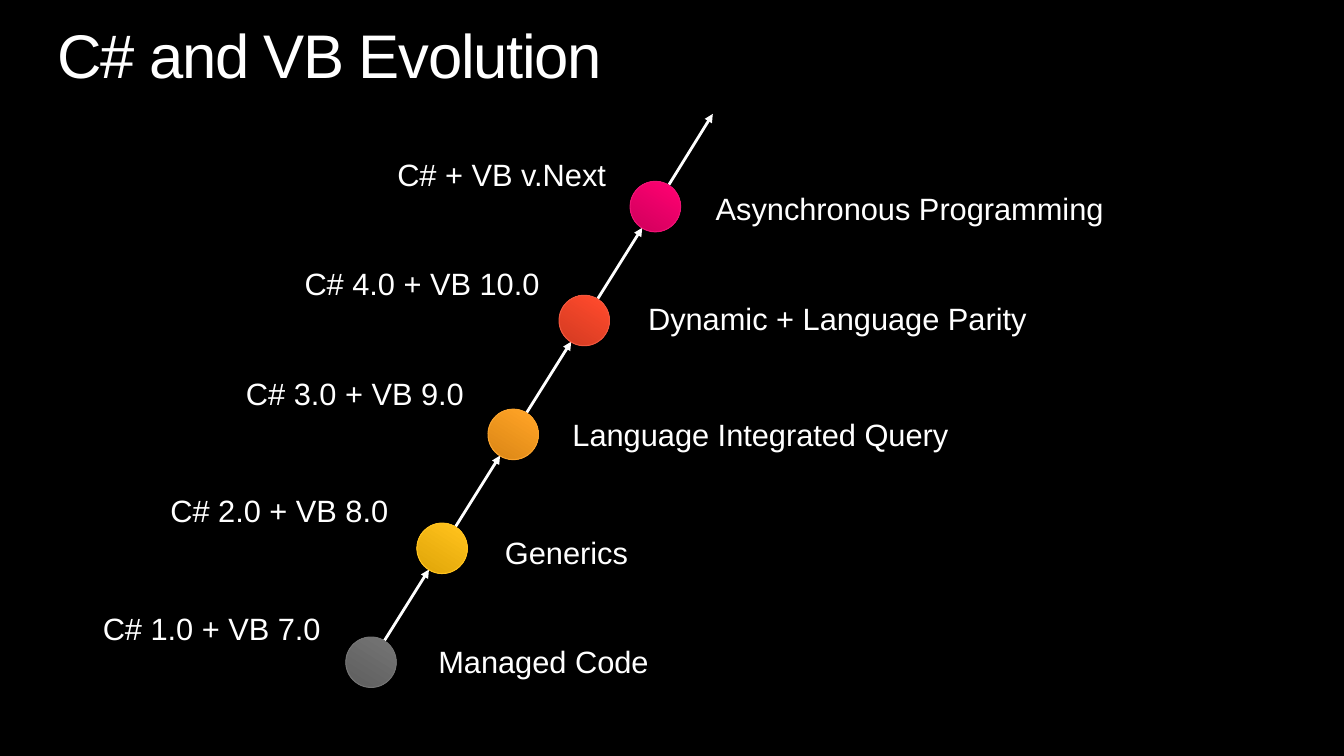
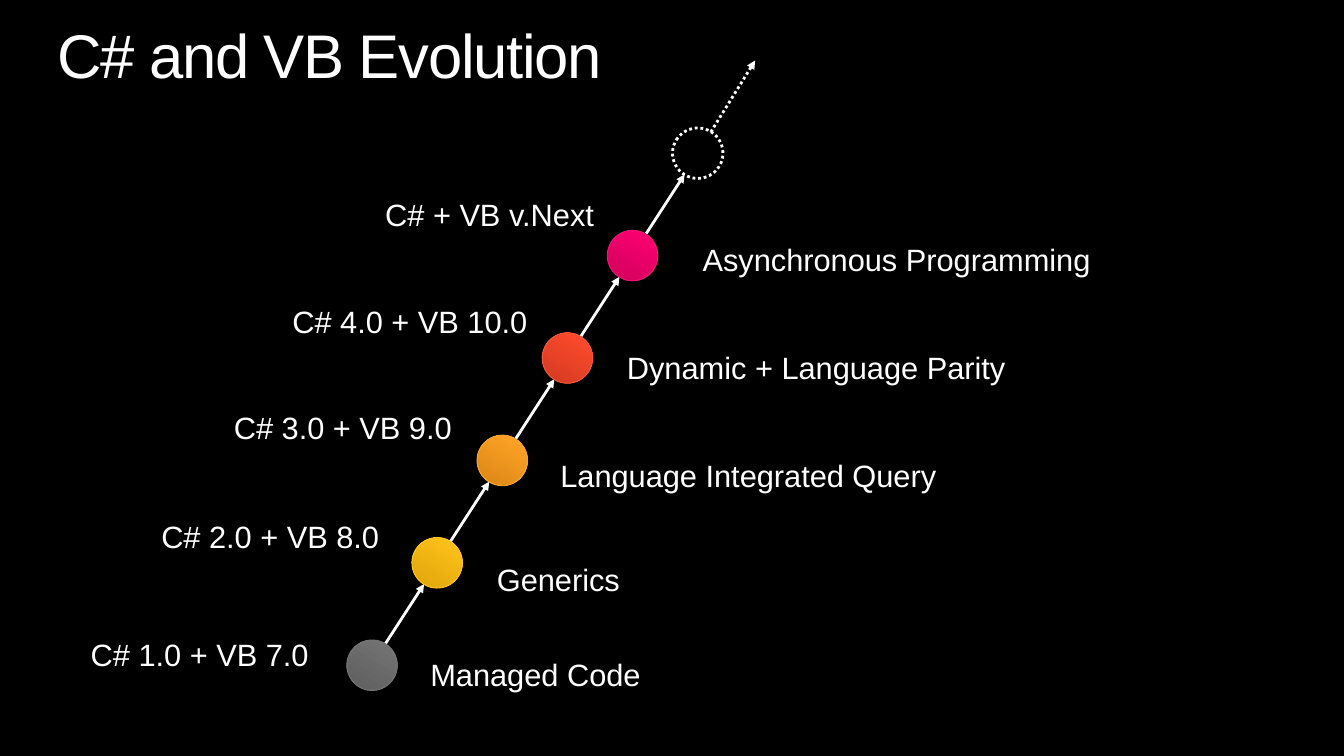
import pptx
import pptx.util
import pptx.dml.color
import pptx.enum.dml
import pptx.enum.shapes
import pptx.enum.text
import pptx.oxml
import pptx.oxml.ns

Inches = pptx.util.Inches
Pt = pptx.util.Pt
ALIGN = pptx.enum.text.PP_ALIGN
ANCHOR = pptx.enum.text.MSO_ANCHOR
SHAPE = pptx.enum.shapes.MSO_SHAPE
LINE = pptx.enum.shapes.MSO_CONNECTOR.STRAIGHT
DOTS = pptx.enum.dml.MSO_LINE.ROUND_DOT

COLORS = {
    "back": "000000", "white": "FFFFFF",
    "gray": ("595959", "737373", "747474"),
    "gold": ("D79D03", "FFC21C", "FFC21F"),
    "orange": ("D17F11", "FFA326", "F9A32E"),
    "red": ("C7371F", "FF4A2C", "F0573E"),
    "pink": ("C40057", "FE0071", "ED1374"),
}
FONT = "Arial"
TITLE = "C# and VB Evolution"
STAGES = [
    ("C# 1.0 + VB 7.0", "Managed Code", "gray"),
    ("C# 2.0 + VB 8.0", "Generics", "gold"),
    ("C# 3.0 + VB 9.0", "Language Integrated Query", "orange"),
    ("C# 4.0 + VB 10.0", "Dynamic + Language Parity", "red"),
    ("C# + VB v.Next", "Asynchronous Programming", "pink"),
]
SLIDES = [
    {
        "first": (3.68, 6.57), "last": (6.5, 2.05), "future": False,
        "left": [(3.28, 6), (3.95, 4.83), (4.7, 3.67), (5.45, 2.58), (6.11, 1.5)],
        "right": [(4.25, 6.33), (4.91, 5.25), (5.58, 4.08), (6.33, 2.92), (7, 1.83)],
    },
    {
        "first": (3.69, 6.6), "last": (6.92, 1.52), "future": True,
        "left": [(3.16, 6.26), (3.86, 5.09), (4.58, 4.01), (5.33, 2.95), (5.99, 1.89)],
        "right": [(4.17, 6.46), (4.83, 5.51), (5.46, 4.48), (6.12, 3.41), (6.87, 2.34)],
    },
]
DOT = 0.5
TILT = 32
GAP_X, GAP_Y = 0.13, 0.21
EXIT_X, EXIT_Y = 0.7, 1.13
LEFT_W, RIGHT_W, LABEL_H = 2.6, 5.5, 0.47


def rgb(code):
    return pptx.dml.color.RGBColor.from_string(code)


def write(frame, text, size=22, color="white", align=ALIGN.LEFT,
          pad=(0.1, 0.05), tight=None, track=None):
    frame.word_wrap = True
    frame.vertical_anchor = ANCHOR.TOP
    frame.margin_left = frame.margin_right = Inches(pad[0])
    frame.margin_top = frame.margin_bottom = Inches(pad[1])
    para = frame.paragraphs[0]
    para.alignment = align
    para.line_spacing = tight
    run = para.add_run()
    run.text = text
    run.font.name = FONT
    run.font.size = Pt(size)
    run.font.color.rgb = rgb(COLORS[color])
    if track is not None:
        run.font._element.set("spc", str(track))


def label(slide, text, x, y, width, align):
    box = slide.shapes.add_textbox(Inches(x), Inches(y), Inches(width), Inches(LABEL_H))
    write(box.text_frame, text, align=align)


def stroke(line, color, width, dotted=False):
    line.color.rgb = rgb(color)
    line.width = Pt(width)
    if dotted:
        line.dash_style = DOTS


def arrow(slide, start, end, dotted):
    line = slide.shapes.add_connector(
        LINE, Inches(start[0] + GAP_X), Inches(start[1] - GAP_Y),
        Inches(end[0] - GAP_X), Inches(end[1] + GAP_Y))
    stroke(line.line, COLORS["white"], 2, dotted)
    edge = line.line._get_or_add_ln()
    tip = pptx.oxml.ns.qn("a:tailEnd")
    edge.append(edge.makeelement(tip, {"type": "triangle"}))
    props = line._element.spPr
    props.append(props.makeelement(pptx.oxml.ns.qn("a:effectLst"), {}))


def circle(slide, center, tint=None):
    dot = slide.shapes.add_shape(
        SHAPE.OVAL, Inches(center[0] - DOT / 2), Inches(center[1] - DOT / 2),
        Inches(DOT), Inches(DOT))
    dot.shadow.inherit = False
    dot.rotation = TILT
    if tint is None:
        dot.fill.background()
        stroke(dot.line, COLORS["white"], 2, True)
        return
    dark, light, rim = COLORS[tint]
    dot.fill.gradient()
    dot.fill.gradient_angle = 90
    for stop, code, place in zip(dot.fill.gradient_stops, (dark, light), (0, 0.8)):
        stop.color.rgb = rgb(code)
        stop.position = place
    stroke(dot.line, rim, 0.75)


def build(deck, layout, data):
    slide = deck.slides.add_slide(layout)
    write(slide.shapes.title.text_frame, TITLE, size=44, pad=(0, 0), tight=0.9, track=-100)
    tints = [tint for _, _, tint in STAGES] + [None] * data["future"]
    (x, y), (end_x, end_y) = data["first"], data["last"]
    steps = len(tints) - 1
    points = [(x + (end_x - x) * i / steps, y + (end_y - y) * i / steps)
              for i in range(len(tints))]
    points.append((end_x + EXIT_X, end_y - EXIT_Y))
    for tint, start, end in zip(tints, points, points[1:]):
        arrow(slide, start, end, tint is None)
        circle(slide, start, tint)
    for (version, topic, _), left, right in zip(STAGES, data["left"], data["right"]):
        label(slide, version, left[0] - LEFT_W, left[1], LEFT_W, ALIGN.RIGHT)
        label(slide, topic, right[0], right[1], RIGHT_W, ALIGN.LEFT)


def main():
    deck = pptx.Presentation()
    deck.slide_width, deck.slide_height = Inches(13.33), Inches(7.5)
    back = deck.slide_master.background.fill
    back.solid()
    back.fore_color.rgb = rgb(COLORS["back"])
    layout = deck.slide_layouts.get_by_name("Title Only")
    title = layout.placeholders[0]
    title.left, title.top = Inches(0.57), Inches(0.25)
    title.width, title.height = Inches(12.19), Inches(0.67)
    for data in SLIDES:
        build(deck, layout, data)
    deck.save("out.pptx")


if __name__ == "__main__":
    main()
